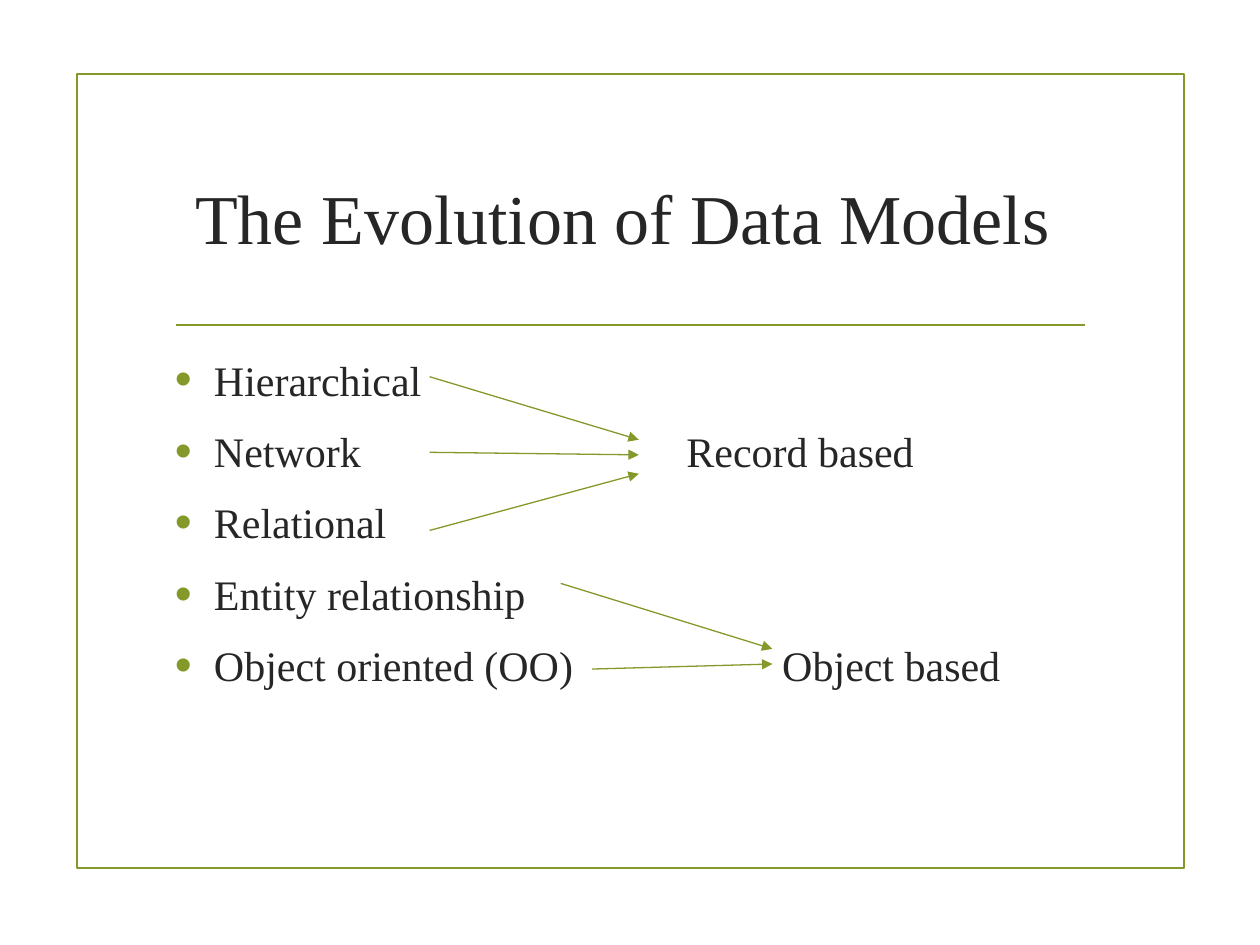
"""Build the slide "The Evolution of Data Models"."""
import pptx
import pptx.dml.color
import pptx.enum.shapes
import pptx.enum.text
import pptx.oxml
import pptx.oxml.ns
import pptx.util
from dataclasses import dataclass

Inches = pptx.util.Inches
Pt = pptx.util.Pt
Anchor = pptx.enum.text.MSO_ANCHOR
Align = pptx.enum.text.PP_ALIGN


@dataclass(frozen=True)
class Theme:
    font: str = "Times New Roman"
    ink: pptx.dml.color.RGBColor = pptx.dml.color.RGBColor(0x26, 0x26, 0x26)
    accent: pptx.dml.color.RGBColor = pptx.dml.color.RGBColor(0x83, 0x99, 0x2A)
    title_size: int = 40
    body_size: int = 24
    frame_width: float = 1.25
    arrow_width: float = 0.75


theme = Theme()


def write(paragraph, text, *, size, align=Align.LEFT, before=0, after=0, bullet=False, tab=None):
    properties = paragraph._p.get_or_add_pPr()
    paragraph.alignment = align
    paragraph.space_before = Pt(before)
    paragraph.space_after = Pt(after)
    parts = []
    if bullet:
        properties.set("marL", str(Inches(0.31)))
        properties.set("indent", str(-Inches(0.31)))
        parts += [
            f'<a:buClr %s><a:srgbClr val="{theme.accent}"/></a:buClr>',
            '<a:buSzPct %s val="115000"/>',
            '<a:buFont %s typeface="Arial"/>',
            '<a:buChar %s char="•"/>',
        ]
    if tab:
        parts.append(f'<a:tabLst %s><a:tab pos="{Inches(tab)}" algn="l"/></a:tabLst>')
    for part in parts:
        properties.append(pptx.oxml.parse_xml(part % pptx.oxml.ns.nsdecls("a")))
    run = paragraph.add_run()
    run.text = text
    run.font.name = theme.font
    run.font.size = Pt(size)
    run.font.color.rgb = theme.ink


def draw_line(start, end, *, width, arrow=False):
    connector = slide.shapes.add_connector(
        pptx.enum.shapes.MSO_CONNECTOR.STRAIGHT, *map(Inches, start + end))
    connector.line.color.rgb = theme.accent
    connector.line.width = Pt(width)
    if arrow:
        connector.line._get_or_add_ln().append(pptx.oxml.parse_xml(
            f'<a:tailEnd {pptx.oxml.ns.nsdecls("a")} type="triangle"/>'))
    connector._element.spPr.append(
        pptx.oxml.parse_xml(f'<a:effectLst {pptx.oxml.ns.nsdecls("a")}/>'))


presentation = pptx.Presentation()
presentation.slide_width = Inches(10)
presentation.slide_height = Inches(7.5)
slide = presentation.slides.add_slide(presentation.slide_layouts[6])

frame = slide.shapes.add_shape(
    pptx.enum.shapes.MSO_SHAPE.RECTANGLE, Inches(0.61), Inches(0.59), Inches(8.79), Inches(6.3))
frame.shadow.inherit = False
frame.fill.background()
frame.line.color.rgb = theme.accent
frame.line.width = Pt(theme.frame_width)
draw_line((1.4, 2.58), (8.61, 2.58), width=theme.frame_width)

title = slide.shapes.add_textbox(Inches(1.29), Inches(1), Inches(7.44), Inches(1.43)).text_frame
title.word_wrap = True
title.vertical_anchor = Anchor.MIDDLE
write(title.paragraphs[0], "The Evolution of Data Models ", size=theme.title_size, align=Align.CENTER)

models = [
    ("Hierarchical", None),
    ("Network\tRecord based", 4.06),
    ("Relational", None),
    ("Entity relationship", None),
    ("Object oriented (OO)\tObject based", 4.82),
]
body = slide.shapes.add_textbox(Inches(1.29), Inches(2.72), Inches(7.44), Inches(3.77)).text_frame
body.word_wrap = True
body.margin_top = Inches(0.09)
for index, (text, tab) in enumerate(models):
    paragraph = body.add_paragraph() if index else body.paragraphs[0]
    write(paragraph, text, size=theme.body_size, before=6 if index else 0, after=6, bullet=True, tab=tab)

arrows = [
    ((3.41, 2.99), (5.07, 3.49)),
    ((3.41, 3.59), (5.07, 3.61)),
    ((3.41, 4.21), (5.07, 3.76)),
    ((4.45, 4.63), (6.13, 5.15)),
    ((4.7, 5.31), (6.13, 5.27)),
]
for start, end in arrows:
    draw_line(start, end, width=theme.arrow_width, arrow=True)

presentation.save("out.pptx")
